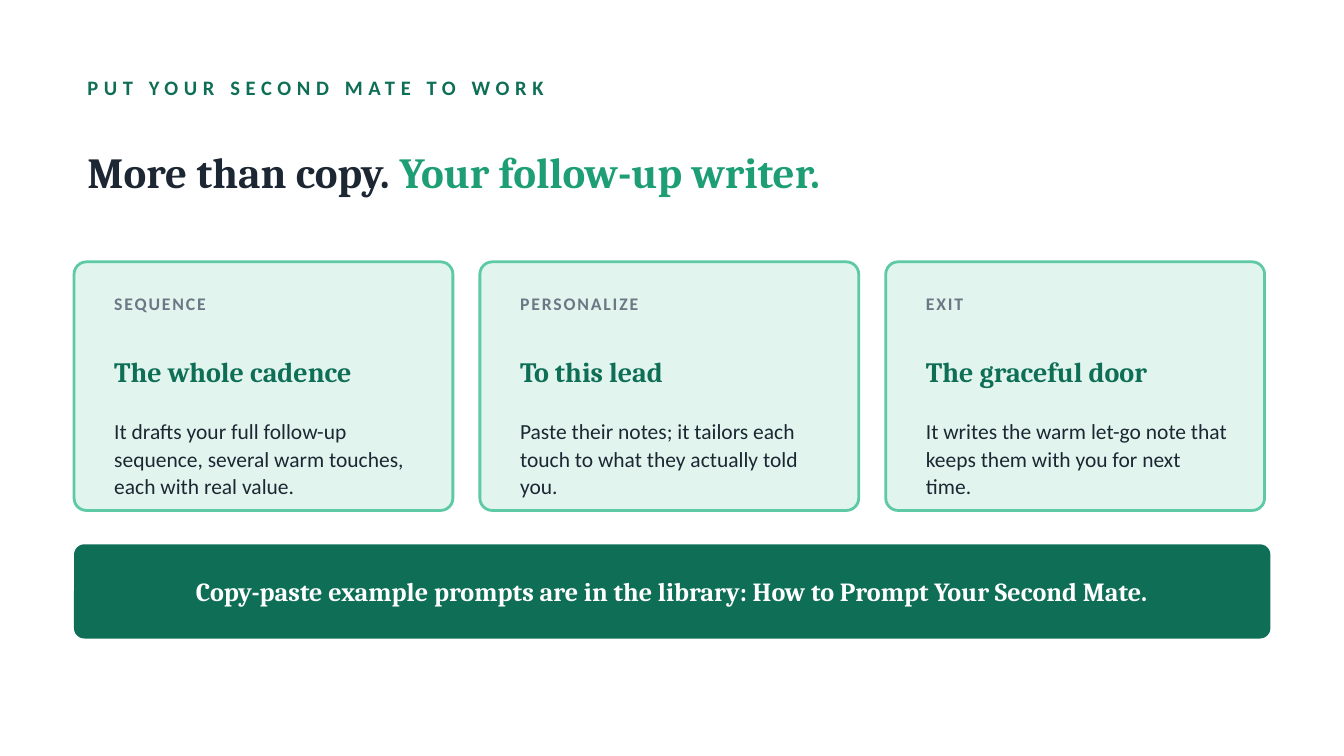
import dataclasses
import typing

import pptx
import pptx.dml.color
import pptx.enum.shapes
import pptx.enum.text
import pptx.shapes.autoshape
import pptx.slide
import pptx.util

Cm = pptx.util.Cm
Pt = pptx.util.Pt
RGBColor = pptx.dml.color.RGBColor

DARK_GREEN = RGBColor(0x0F, 0x6E, 0x56)
GREEN = RGBColor(0x1D, 0x9E, 0x75)
BORDER_GREEN = RGBColor(0x5D, 0xCA, 0xA5)
PALE_GREEN = RGBColor(0xE1, 0xF5, 0xEE)
INK = RGBColor(0x1C, 0x27, 0x33)
GREY = RGBColor(0x6B, 0x77, 0x85)
WHITE = RGBColor(0xFF, 0xFF, 0xFF)

MARGIN = 1.4
CONTENT_WIDTH = 22.61
CARD_TOP = 4.95
CARD_WIDTH = 7.16
CARD_HEIGHT = 4.7
CARD_PITCH = 7.67
CARD_INSET = 0.51
CARD_TEXT_WIDTH = 6.22
BANNER_TOP = 10.29
BANNER_HEIGHT = 1.78
BANNER_INSET = 0.63


class Box(typing.NamedTuple):
    left: float
    top: float
    width: float
    height: float

    def lengths(self) -> list[pptx.util.Length]:
        return [Cm(value) for value in self]


@dataclasses.dataclass(frozen=True)
class TextStyle:
    font: dict[str, typing.Any]
    color: RGBColor
    tracking: int = 0
    paragraph: dict[str, typing.Any] = dataclasses.field(default_factory=dict)


class Span(typing.NamedTuple):
    text: str
    style: TextStyle


class Card(typing.NamedTuple):
    label: str
    heading: str
    body: str


EYEBROW = TextStyle({"name": "Calibri", "size": Pt(11), "bold": True}, DARK_GREEN, 3)
TITLE = TextStyle({"name": "Cambria", "size": Pt(23), "bold": True}, INK)
TITLE_ACCENT = dataclasses.replace(TITLE, color=GREEN)
LABEL = TextStyle({"name": "Calibri", "size": Pt(9.5), "bold": True}, GREY, 1)
HEADING = TextStyle({"name": "Cambria", "size": Pt(15), "bold": True}, DARK_GREEN)
BODY = TextStyle(
    {"name": "Calibri", "size": Pt(11.5)}, INK, paragraph={"line_spacing": 1.08}
)
BANNER = TextStyle(
    {"name": "Cambria", "size": Pt(14), "bold": True},
    WHITE,
    paragraph={"alignment": pptx.enum.text.PP_ALIGN.CENTER},
)

CARDS = [
    Card(
        "SEQUENCE",
        "The whole cadence",
        "It drafts your full follow-up sequence, several warm touches, each with real value.",
    ),
    Card(
        "PERSONALIZE",
        "To this lead",
        "Paste their notes; it tailors each touch to what they actually told you.",
    ),
    Card(
        "EXIT",
        "The graceful door",
        "It writes the warm let-go note that keeps them with you for next time.",
    ),
]


def apply_format(target: typing.Any, values: dict[str, typing.Any]) -> None:
    for name, value in values.items():
        setattr(target, name, value)


def add_text(slide: pptx.slide.Slide, box: Box, *spans: Span) -> None:
    frame = slide.shapes.add_textbox(*box.lengths()).text_frame
    apply_format(
        frame,
        {"word_wrap": True, "vertical_anchor": pptx.enum.text.MSO_ANCHOR.MIDDLE},
    )
    paragraph = frame.paragraphs[0]
    for span in spans:
        apply_format(paragraph, span.style.paragraph)
        run = paragraph.add_run()
        run.text = span.text
        apply_format(run.font, span.style.font)
        run.font.color.rgb = span.style.color
        if span.style.tracking:
            run._r.get_or_add_rPr().set("spc", str(span.style.tracking * 100))


def add_panel(
    slide: pptx.slide.Slide, box: Box, corner: float, fill: RGBColor
) -> pptx.shapes.autoshape.Shape:
    shape = slide.shapes.add_shape(
        pptx.enum.shapes.MSO_SHAPE.ROUNDED_RECTANGLE, *box.lengths()
    )
    shape.adjustments[0] = corner
    shape.shadow.inherit = False
    shape.fill.solid()
    shape.fill.fore_color.rgb = fill
    shape.line.fill.background()
    return shape


def add_card(slide: pptx.slide.Slide, left: float, card: Card) -> None:
    panel = add_panel(
        slide, Box(left, CARD_TOP, CARD_WIDTH, CARD_HEIGHT), 0.05, PALE_GREEN
    )
    panel.line.color.rgb = BORDER_GREEN
    panel.line.width = Pt(1.5)
    rows = [
        (5.36, 0.76, Span(card.label, LABEL)),
        (6.12, 1.78, Span(card.heading, HEADING)),
        (7.95, 1.4, Span(card.body, BODY)),
    ]
    for top, height, span in rows:
        add_text(slide, Box(left + CARD_INSET, top, CARD_TEXT_WIDTH, height), span)


def main() -> None:
    presentation = pptx.Presentation()
    apply_format(presentation, {"slide_width": Cm(25.4), "slide_height": Cm(14.29)})
    slide = presentation.slides.add_slide(presentation.slide_layouts[6])

    add_text(
        slide,
        Box(MARGIN, 1.27, CONTENT_WIDTH, 0.76),
        Span("PUT YOUR SECOND MATE TO WORK", EYEBROW),
    )
    add_text(
        slide,
        Box(MARGIN, 2.16, CONTENT_WIDTH, 2.16),
        Span("More than copy. ", TITLE),
        Span("Your follow-up writer.", TITLE_ACCENT),
    )
    for index, card in enumerate(CARDS):
        add_card(slide, MARGIN + index * CARD_PITCH, card)

    banner = Box(MARGIN, BANNER_TOP, CONTENT_WIDTH, BANNER_HEIGHT)
    add_panel(slide, banner, 0.11, DARK_GREEN)
    add_text(
        slide,
        banner._replace(
            left=MARGIN + BANNER_INSET, width=CONTENT_WIDTH - 2 * BANNER_INSET
        ),
        Span(
            "Copy-paste example prompts are in the library: How to Prompt Your Second Mate.",
            BANNER,
        ),
    )
    presentation.save("out.pptx")


if __name__ == "__main__":
    main()
